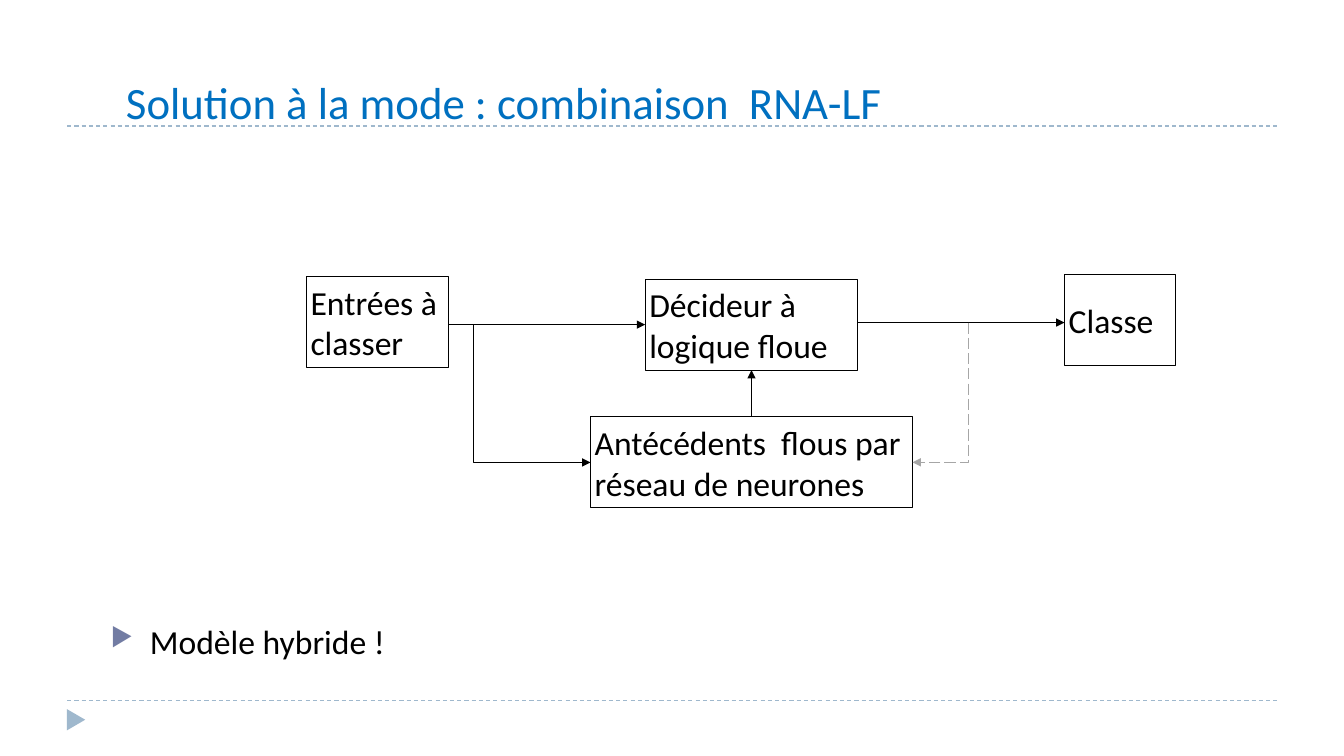
from lxml import etree
from pptx import Presentation
from pptx.dml.color import RGBColor
from pptx.enum.dml import MSO_LINE
from pptx.enum.shapes import MSO_CONNECTOR, MSO_SHAPE
from pptx.enum.text import MSO_ANCHOR, MSO_AUTO_SIZE, PP_ALIGN
from pptx.oxml.ns import qn
from pptx.util import Pt

STRAIGHT = MSO_CONNECTOR.STRAIGHT
RECTANGLE, TRIANGLE = MSO_SHAPE.RECTANGLE, MSO_SHAPE.ISOSCELES_TRIANGLE
DASH, LONG_DASH = MSO_LINE.DASH, MSO_LINE.LONG_DASH
MIDDLE, TOP = MSO_ANCHOR.MIDDLE, MSO_ANCHOR.TOP

BLACK = RGBColor(0x00, 0x00, 0x00)
GREY = RGBColor(0xA6, 0xA6, 0xA6)
TITLE_BLUE = RGBColor(0x00, 0x70, 0xC0)
PALE_BLUE = RGBColor(0x9F, 0xB8, 0xCD)
BULLET_BLUE = RGBColor(0x72, 0x7C, 0xA3)


def write_text(shape, text, size, color, anchor, margins):
    """Fill a shape with one left-aligned paragraph; margins are (side, top and bottom)."""
    frame = shape.text_frame
    side, vertical = (Pt(margin) for margin in margins)
    frame_format = {
        "word_wrap": True, "auto_size": MSO_AUTO_SIZE.NONE, "vertical_anchor": anchor,
        "margin_left": side, "margin_right": side,
        "margin_top": vertical, "margin_bottom": vertical,
    }
    for name, value in frame_format.items():
        setattr(frame, name, value)
    paragraph = frame.paragraphs[0]
    paragraph.alignment = PP_ALIGN.LEFT
    run = paragraph.add_run()
    run.text = text
    run.font.name, run.font.size = "Calibri", Pt(size)
    run.font.color.rgb = color
    return paragraph


def draw_line(points, color, width, dash=None, arrow=True):
    """Draw a connector through two points, or an open outline through more."""
    points = [(Pt(x), Pt(y)) for x, y in points]
    if len(points) == 2:
        shape = slide.shapes.add_connector(STRAIGHT, *points[0], *points[1])
    else:
        builder = slide.shapes.build_freeform(*points[0])
        builder.add_line_segments(points[1:], close=False)
        shape = builder.convert_to_shape()
        shape.fill.background()
    shape.line.color.rgb = color
    shape.line.width = Pt(width)
    if dash:
        shape.line.dash_style = dash
    properties = shape.element.spPr
    if arrow:
        etree.SubElement(properties.find(qn("a:ln")), qn("a:tailEnd"), type="triangle")
    etree.SubElement(properties, qn("a:effectLst"))


presentation = Presentation()
presentation.slide_width, presentation.slide_height = Pt(960), Pt(540)
slide = presentation.slides.add_slide(presentation.slide_layouts[5])

# Page frame
for y in (500.4, 90):
    draw_line([(48, y), (912, y)], PALE_BLUE, 0.75, DASH, arrow=False)
marker = slide.shapes.add_shape(TRIANGLE, Pt(46.8), Pt(507.6), Pt(15.1), Pt(13))
marker.rotation = 90
marker.shadow.inherit = False
marker.fill.solid()
marker.fill.fore_color.rgb = PALE_BLUE
marker.line.fill.background()

title = slide.shapes.title
title.left, title.top, title.width, title.height = Pt(82.8), Pt(12.2), Pt(793.4), Pt(120.2)
write_text(title, "Solution à la mode : combinaison  RNA-LF", 32, TITLE_BLUE, MIDDLE, (7.2, 3.6))

# Bulleted remark
remark = slide.shapes.add_textbox(Pt(72), Pt(439.9), Pt(835.2), Pt(36))
paragraph = write_text(remark, "Modèle hybride !", 24, BLACK, TOP, (7.2, 3.6))
paragraph.space_before = Pt(6)
bullet_format = paragraph._p.get_or_add_pPr()
bullet_format.set("marL", str(Pt(28)))
bullet_format.set("indent", str(Pt(-28)))
bullet_color = etree.SubElement(bullet_format, qn("a:buClr"))
etree.SubElement(bullet_color, qn("a:srgbClr"), val=str(BULLET_BLUE))
etree.SubElement(bullet_format, qn("a:buSzPct"), val="76000")
etree.SubElement(bullet_format, qn("a:buChar"), char="▶")

# Block diagram
BOX_HEIGHT = 65
boxes = [
    ("Décideur à logique floue", 460.8, 199.4, 152),
    ("Antécédents  flous par réseau de neurones", 421.8, 297.8, 230),
    ("Entrées à classer", 218.8, 197.6, 101.4),
    ("Classe", 760.4, 196.2, 79.4),
]
for text, left, top, width in boxes:
    box = slide.shapes.add_shape(RECTANGLE, Pt(left), Pt(top), Pt(width), Pt(BOX_HEIGHT))
    box.shadow.inherit = False
    box.fill.background()
    box.line.color.rgb = BLACK
    box.line.width = Pt(0.75)
    write_text(box, text, 24, BLACK, MIDDLE, (3, 0))

input_y, output_y, network_y = 231.9, 230.4, 330.3
arrows = [
    ([(536.8, 297.8), (536.8, 264.4)], BLACK, None),
    ([(320.2, input_y), (460.8, input_y)], BLACK, None),
    ([(338.2, input_y), (338.2, network_y), (421.8, network_y)], BLACK, None),
    ([(612.8, output_y), (760.4, output_y)], BLACK, None),
    ([(691.8, output_y), (691.8, network_y), (651.8, network_y)], GREY, LONG_DASH),
]
for points, color, dash in arrows:
    draw_line(points, color, 1, dash)

presentation.save("out.pptx")
